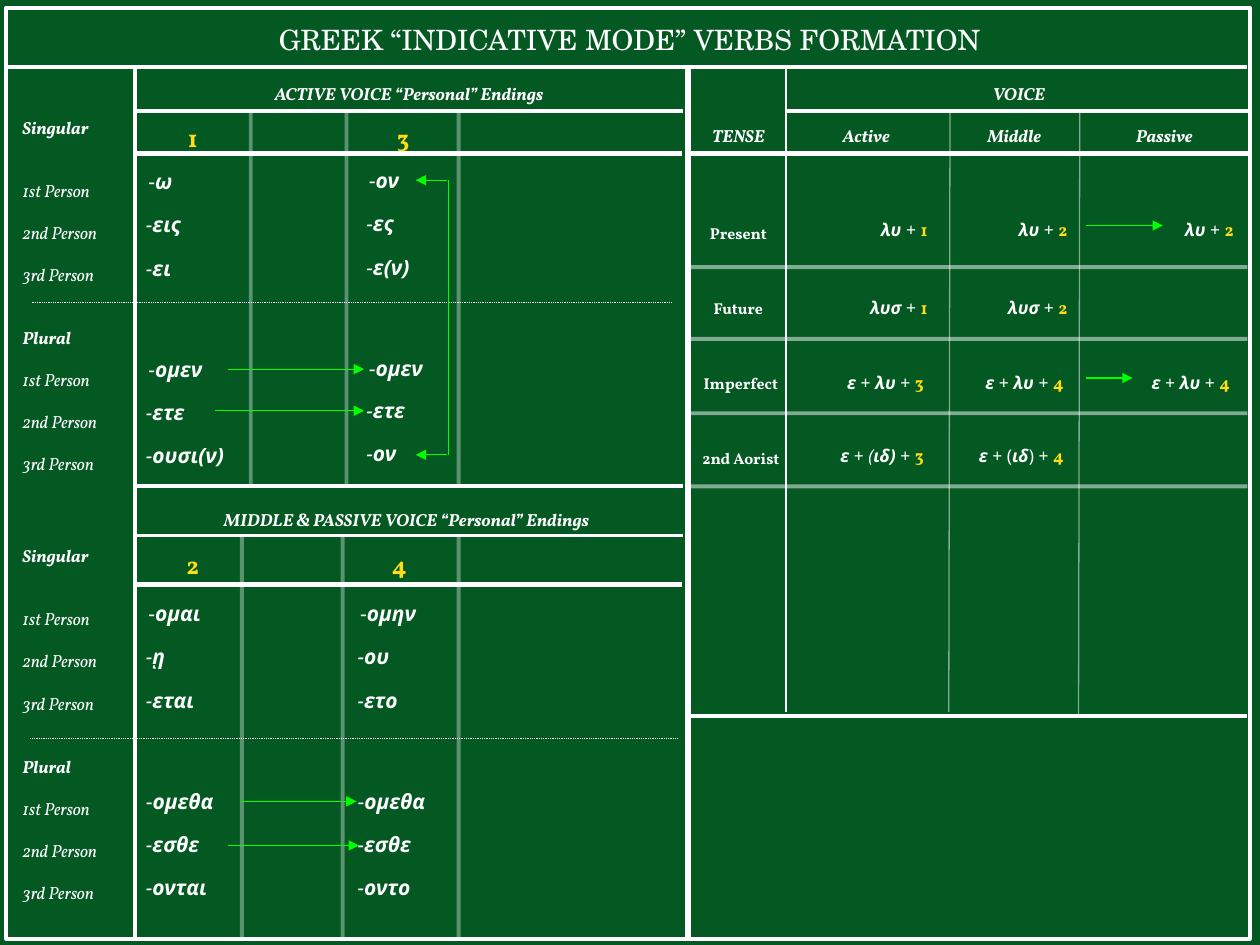
from lxml.etree import SubElement
from pptx import Presentation
from pptx.dml.color import RGBColor
from pptx.enum.dml import MSO_LINE
from pptx.enum.shapes import MSO_CONNECTOR, MSO_SHAPE
from pptx.enum.text import MSO_ANCHOR, PP_ALIGN as Align
from pptx.oxml.ns import qn
from pptx.util import Inches, Pt

GREEN, WHITE, YELLOW, LIME = "045822", "FFFFFF", "FFDC14", "00FF00"
COLUMNS, ROWS = 100, 75

STYLES = {
    "title": dict(name="TeX Gyre Schola", size=Pt(16)),
    "heading": dict(name="Vollkorn", size=Pt(10), bold=True, italic=True),
    "person": dict(name="Vollkorn", size=Pt(10), italic=True),
    "tense": dict(name="Vollkorn", size=Pt(9), bold=True),
    "number": dict(name="Vollkorn", size=Pt(10), bold=True),
    "big number": dict(name="Vollkorn", size=Pt(14), bold=True),
    "stem": dict(name="Noto Sans", size=Pt(10), bold=True, italic=True),
    "slanted": dict(name="Noto Sans", size=Pt(10), italic=True),
    "plain": dict(name="Noto Sans", size=Pt(10)),
    "hyphen": dict(name="Noto Sans", size=Pt(12)),
    "slanted hyphen": dict(name="Noto Sans", size=Pt(12), italic=True),
    "ending": dict(name="Noto Sans", size=Pt(12), bold=True, italic=True),
    "iota ending": dict(name="Vollkorn", size=Pt(12), bold=True, italic=True),
}

PERSONS = [("Singular", "heading", 0), ("1st Person", "person", 24),
           ("2nd Person", "person", 12), ("3rd Person", "person", 12),
           ("Plural", "heading", 24), ("1st Person", "person", 12),
           ("2nd Person", "person", 12), ("3rd Person", "person", 12)]

ENDING_STEPS = (0, 3.4, 6.9, 14.9, 18.3, 21.7)
ENDINGS = [
    (10.6, 12.9, (0, 3), "ω εις ει ομεν ετε ουσι(ν)"),
    (28.1, 12.8, (0, 3), "ον ες ε(ν) ομεν ετε ον"),
    (10.6, 47.2, (0,), "ομαι ῃ εται ομεθα εσθε ονται"),
    (27.4, 47.2, (0,), "ομην ου ετο ομεθα εσθε οντο"),
]

NUMBERS = [("1", 10.7, 9.3), ("3", 27.4, 9.3), ("2", 10.7, 43.2), ("4", 27.1, 43.2)]

HEADINGS = [("ACTIVE VOICE “Personal” Endings", 10.8, 6.1, 43.3),
            ("MIDDLE & PASSIVE VOICE “Personal” Endings", 6, 39.9, 52.5),
            ("VOICE", 62.5, 6.1, 36.7), ("TENSE", 53.6, 9.4, 10),
            ("Active", 62.9, 9.4, 11.7), ("Middle", 75.1, 9.4, 10.8),
            ("Passive", 85.8, 9.4, 13.2)]

EPSILON, PLUS, LU, LUS = ("ε ", "stem"), ("+ ", "plain"), ("λυ ", "stem"), ("λυσ ", "stem")
ONE, TWO, THREE, FOUR = [(digit, "number") for digit in "1234"]
FORMULA_RIGHTS = (74.6, 85.7, 98.9)
TENSES = [
    ("Present", 58.6, 17.3, 16.9, 0, [[LU, PLUS, ONE], [LU, PLUS, TWO], [LU, PLUS, TWO]]),
    ("Future", 58.6, 23.2, 23.1, 0, [[LUS, PLUS, ONE], [LUS, PLUS, TWO]]),
    ("Imperfect", 58.8, 29.2, 29, 0.3, [[EPSILON, PLUS, LU, PLUS, THREE],
                                        [EPSILON, PLUS, LU, PLUS, FOUR],
                                        [EPSILON, PLUS, LU, PLUS, FOUR]]),
    ("2nd Aorist", 58.8, 35.1, 34.8, 0.3, [
        [EPSILON, ("+", "plain"), (" (", "slanted"), ("ιδ) ", "stem"), PLUS, THREE],
        [EPSILON, ("+ (", "plain"), ("ιδ", "stem"), (") + ", "plain"), FOUR]]),
]

RULES = [
    (2.25, 100, [(0.5, 5.3, 99, 5.3), (10.7, 5.4, 10.7, 74.6), (10.8, 8.8, 54.2, 8.8),
                 (10.7, 38.6, 54.2, 38.6), (10.7, 42.5, 54.2, 42.5),
                 (62.4, 8.8, 99.1, 8.8), (54.8, 56.8, 99, 56.8)]),
    (3, 100, [(10.7, 12.2, 54.1, 12.2), (10.6, 46.4, 54.1, 46.4), (54.8, 12.2, 99.2, 12.2)]),
    (3.75, 100, [(54.6, 5.3, 54.6, 74.5)]),
    (1, 100, [(62.4, 5.4, 62.4, 56.5)]),
    (2.25, 35, [(x, 8.9, x, 38.5) for x in (19.9, 27.5, 36.4)]
     + [(x, 42.5, x, 74.4) for x in (19.2, 27.2, 36.4)]),
    (0.75, 50, [(75.4, 8.9, 75.3, 56.5), (85.7, 8.9, 85.6, 56.8)]),
    (2.25, 50, [(54.7, y, 99, y) for y in (21.2, 26.9, 32.8, 38.6)]),
]
DOTTED = [(2.5, 24, 53.3, 24), (2.4, 58.6, 53.8, 58.6)]
ARROWS = [(35.5, 14.3, 33), (35.5, 36.1, 33), (18.1, 29.3, 28.9), (17.1, 32.6, 28.9),
          (19.1, 63.6, 28.3), (18.1, 67.1, 28.5), (86.2, 17.9, 92.3), (86.2, 30, 89.9)]


def color(code):
    """Turn a hex string into a colour."""
    return RGBColor.from_string(code)


def assign(target, values):
    """Set every attribute named in a dict."""
    for key, value in values.items():
        setattr(target, key, value)


class Board:
    """Draws on the current slide with one shared style."""

    def __init__(self):
        """Open a deck with one coloured blank page."""
        self.deck = Presentation()
        assign(self.deck, dict(slide_width=Inches(10), slide_height=Inches(7.5)))
        self.page = self.deck.slides.add_slide(self.deck.slide_layouts[6])
        self.page.background.fill.solid()
        self.page.background.fill.fore_color.rgb = color(GREEN)

    def place(self, *lengths):
        """Turn alternating columns and rows into slide lengths."""
        units = (self.deck.slide_width / COLUMNS, self.deck.slide_height / ROWS)
        return [round(length * units[i % 2]) for i, length in enumerate(lengths)]

    def frame(self, *area):
        """Draw the unfilled outer border."""
        shape = self.page.shapes.add_shape(MSO_SHAPE.RECTANGLE, *self.place(*area))
        shape.shadow.inherit = False
        shape.fill.background()
        shape.line.color.rgb = color(WHITE)
        shape.line.width = Pt(2.25)

    def text(self, area, paras, align=Align.LEFT, anchor=MSO_ANCHOR.TOP):
        """Add a box of paragraphs, each a list of spans and a space before."""
        box = self.page.shapes.add_textbox(*self.place(*area)).text_frame
        assign(box, dict(word_wrap=True, vertical_anchor=anchor))
        for index, (spans, gap) in enumerate(paras):
            para = box.add_paragraph() if index else box.paragraphs[0]
            assign(para, dict(alignment=align, space_before=Pt(gap)))
            for words, style in spans:
                span = para.add_run()
                span.text = words
                assign(span.font, STYLES[style])
                span.font.color.rgb = color(YELLOW if "number" in style else WHITE)

    def label(self, area, words, style, **options):
        """Add a centred one-line text."""
        self.text(area, [([(words, style)], 0)], Align.CENTER, **options)

    def line(self, ends, width, code=WHITE, opacity=100, dotted=False, arrow=False):
        """Draw a straight line, optionally see-through, dotted or with an arrowhead."""
        link = self.page.shapes.add_connector(MSO_CONNECTOR.STRAIGHT, *self.place(*ends))
        link.line.color.rgb = color(code)
        link.line.width = Pt(width)
        if dotted:
            link.line.dash_style = MSO_LINE.ROUND_DOT
        outline = link.element.spPr.find(qn("a:ln"))
        if opacity < 100:
            paint = outline.find(".//" + qn("a:srgbClr"))
            SubElement(paint, qn("a:alpha"), val=str(opacity * 1000))
        if arrow:
            SubElement(outline, qn("a:tailEnd"), type="triangle")
        SubElement(link.element.spPr, qn("a:effectLst"))


def main():
    """Build and save the verb chart."""
    board = Board()
    board.label((7.5, 0.6, 85, 5), "GREEK “INDICATIVE MODE” VERBS FORMATION", "title",
                anchor=MSO_ANCHOR.MIDDLE)
    board.frame(0.5, 0.6, 98.7, 73.9)
    for width, opacity, group in RULES:
        for ends in group:
            board.line(ends, width, opacity=opacity)
    for ends in DOTTED:
        board.line(ends, 0.5, dotted=True)
    for words, left, top, width in HEADINGS:
        board.label((left, top, width, 2.7), words, "heading")
    for digit, left, top in NUMBERS:
        board.label((left, top, 9.2, 3.3), digit, "big number")
    for top in (8.8, 42.8):
        board.text((0.8, top, 11.7, 29.3),
                   [([(words, style)], gap) for words, style, gap in PERSONS])
    for left, top, nudged, endings in ENDINGS:
        for index, (step, ending) in enumerate(zip(ENDING_STEPS, endings.split())):
            hyphen = "slanted hyphen" if index % 3 else "hyphen"
            style = "iota ending" if ending == "ῃ" else "ending"
            x = left + 0.2 * (index in nudged)
            board.text((x, top + step, 14, 3), [([("-", hyphen), (ending, style)], 0)])
    for tense, center, label_top, top, shift, formulas in TENSES:
        board.label((center - 5, label_top, 10, 2.5), tense, "tense")
        for right, spans in zip(FORMULA_RIGHTS, formulas):
            board.text((right - shift - 14.3, top, 14.3, 2.7), [(spans, 0)], Align.RIGHT)
    for start, y, end in ARROWS:
        board.line((start, y, end, y), 0.75, LIME, arrow=True)
    board.line((35.6, 14.3, 35.6, 36.1), 0.75, LIME)
    board.deck.save("out.pptx")


if __name__ == "__main__":
    main()
